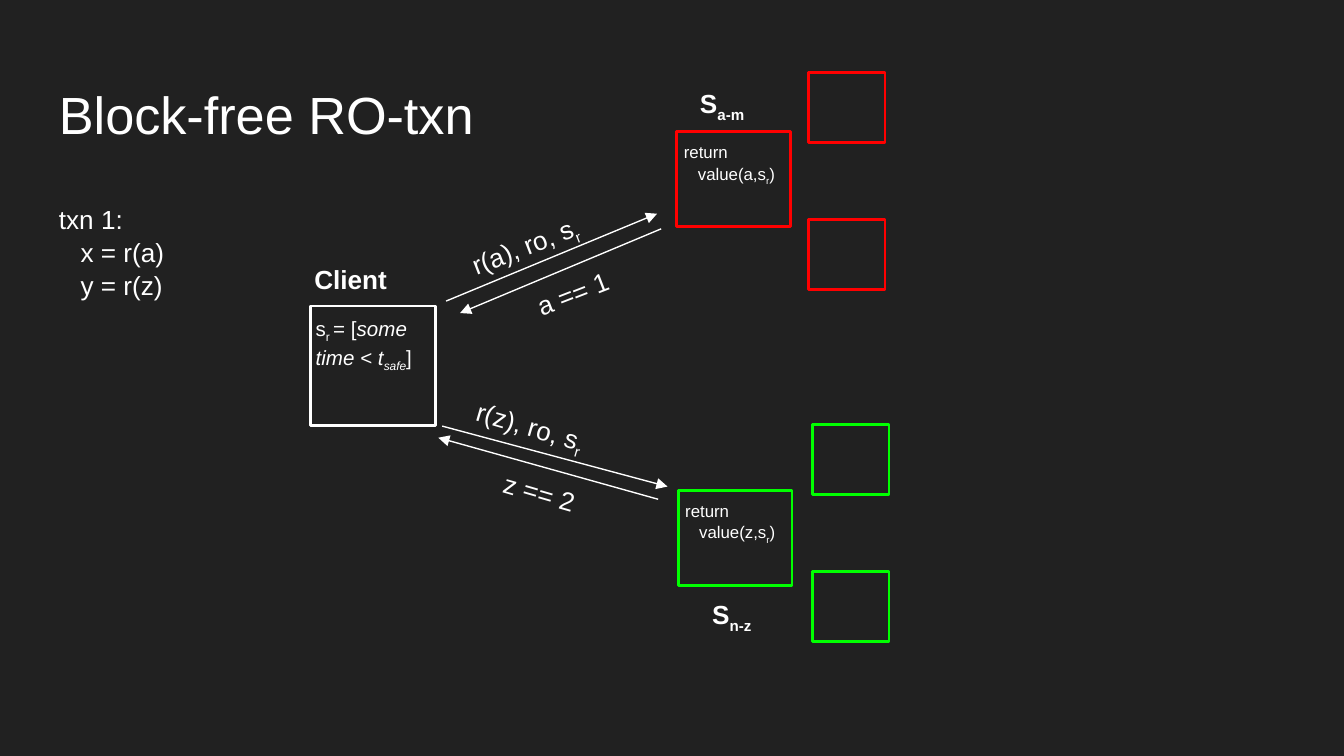
from lxml.etree import SubElement
from pptx import Presentation
from pptx.dml.color import RGBColor
from pptx.enum.shapes import MSO_CONNECTOR, MSO_SHAPE
from pptx.oxml.ns import qn
from pptx.util import Pt

WHITE, RED, GREEN = "FFFFFF", "FF0000", "00FF00"


def color(hex_text):
    return RGBColor.from_string(hex_text)


def add_text(text, left, top, width, height, size=14, bold=False, rotation=0):
    """Lines split at newlines; a tab indents, _..._ is subscript, *...* is italic."""
    box = page.shapes.add_textbox(Pt(left), Pt(top), Pt(width), Pt(height))
    box.rotation = rotation
    frame = box.text_frame
    frame.word_wrap = True
    frame.margin_left = frame.margin_right = Pt(7.2)
    frame.margin_top = frame.margin_bottom = Pt(7.2)
    for number, line in enumerate(text.split("\n")):
        para = frame.paragraphs[0] if number == 0 else frame.add_paragraph()
        para.line_spacing = 1.05
        if line.startswith("\t"):
            para._p.get_or_add_pPr().set("marL", str(Pt(size * 0.83)))
        for i, italic_part in enumerate(line.strip("\t").split("*")):
            for j, part in enumerate(italic_part.split("_")):
                if not part:
                    continue
                span = para.add_run()
                span.text = part
                span.font.name = "Arial"
                span.font.size = Pt(size)
                span.font.bold = bold
                span.font.italic = i % 2 == 1
                span.font.color.rgb = color(WHITE)
                if j % 2 == 1:
                    span.font._element.set("baseline", "-25000")


deck = Presentation()
deck.slide_width, deck.slide_height = Pt(720), Pt(405)
page = deck.slides.add_slide(deck.slide_layouts[6])
page.background.fill.solid()
page.background.fill.fore_color.rgb = color("212121")

# Client, the two shard leaders and their replicas
squares = [(166.3, 164, 67, 64, WHITE),
           (362.6, 70.5, 60.7, 51, RED),
           (363.6, 262.8, 60.7, 51, GREEN)]
for left, top, line_color in [(433.2, 38.7, RED), (435.3, 227.4, GREEN)]:
    for replica in range(2):
        squares.append((left, top + replica * 78.7, 41, 37.5, line_color))

for left, top, width, height, line_color in squares:
    square = page.shapes.add_shape(
        MSO_SHAPE.RECTANGLE, Pt(left), Pt(top), Pt(width), Pt(height))
    square.shadow.inherit = False
    square.fill.background()
    square.line.color.rgb = color(line_color)
    square.line.width = Pt(1.5)

# Requests and replies
for start_x, start_y, end_x, end_y in [
        (239, 161.3, 352, 114.5), (354.2, 122.6, 246.5, 167.7),
        (236.9, 228.3, 357.6, 260.7), (352.6, 267.5, 234.8, 234.5)]:
    arrow = page.shapes.add_connector(
        MSO_CONNECTOR.STRAIGHT, Pt(start_x), Pt(start_y), Pt(end_x), Pt(end_y))
    arrow.line.color.rgb = color(WHITE)
    arrow.line.width = Pt(0.75)
    SubElement(arrow.line._get_or_add_ln(), qn("a:tailEnd"), type="triangle")
    SubElement(arrow._element.spPr, qn("a:effectLst"))

# Title and transaction
add_text("Block-free RO-txn", 24.5, 35.3, 308, 45.4, size=28)
add_text("txn 1:\n\tx = r(a)\n\ty = r(z)", 24.5, 100.8, 88, 121.7)

# Names of the machines
add_text("Client", 161.3, 133.2, 60.5, 24.5, bold=True)
add_text("S_a-m_", 367.9, 38.9, 51.8, 24.5, bold=True)
add_text("S_n-z_", 374.4, 312.5, 51.8, 24.5, bold=True)

# Work inside the machines
add_text("s_r _= [*some time < t_safe_*]", 162, 161.3, 77.8, 58.3, size=11)
add_text("return\n\tvalue(a,s_r_)", 359.3, 68.4, 77.8, 58.3, size=9)
add_text("return\n\tvalue(z,s_r_)", 360, 260.6, 77.8, 64, size=9)

# Labels along the arrows
add_text("r(a), ro, s_r_", 241.2, 113, 87.8, 19.4, rotation=338.7)
add_text("a == 1", 277.2, 140.4, 58.3, 19.4, rotation=338.7)
add_text("r(z), ro, s_r_", 249.1, 214.6, 92.2, 19.4, rotation=16.3)
add_text("z == 2", 264.2, 248.4, 58.3, 19.4, rotation=16.2)

deck.save("out.pptx")
